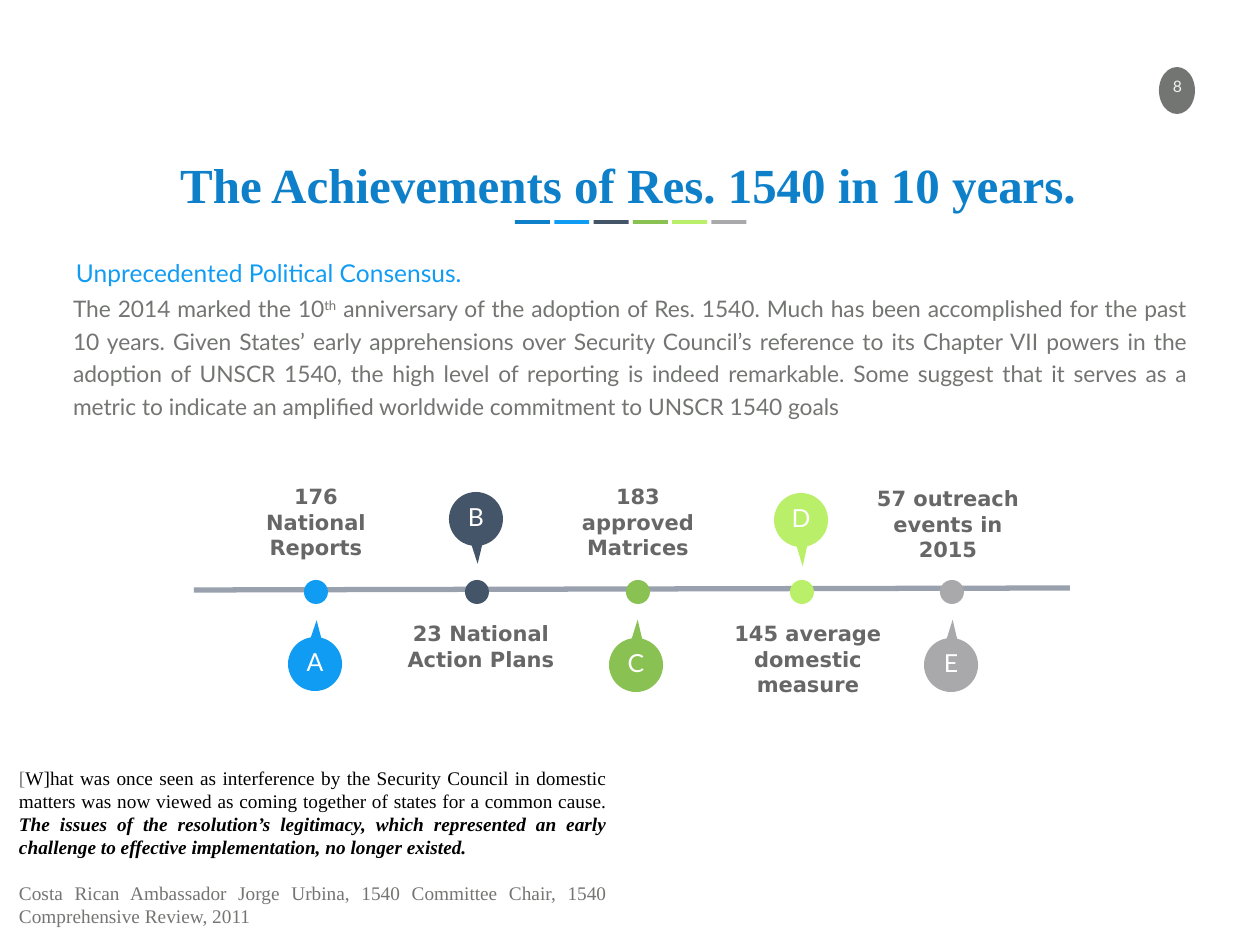
import pptx
import pptx.util
import pptx.dml.color
import pptx.enum.shapes
import pptx.enum.text
import pptx.oxml.ns
import lxml.etree

SCALE = 914400 / 126  # EMU per px
HUES = {
    "navy": "0E80C9", "blue": "119CF4", "slate": "445469", "green": "8AC153",
    "lime": "BAEF69", "grey": "A9A8AB", "text": "737572", "label": "676767",
    "rail": "9AA1AE", "pale": "F2F2F2", "white": "FFFFFF", "black": "000000",
}
KIND = pptx.enum.shapes.MSO_SHAPE
ALIGN = pptx.enum.text.PP_ALIGN
MID = pptx.enum.text.MSO_ANCHOR.MIDDLE
TOP = pptx.enum.text.MSO_ANCHOR.TOP
TIMES = "Times New Roman"

deck = pptx.Presentation()
deck.slide_width = round(1260 * SCALE)
deck.slide_height = round(945 * SCALE)
slide = deck.slides.add_slide(deck.slide_layouts[6])


def draw(kind, at, hue):
    shape = slide.shapes.add_shape(kind, *[round(n * SCALE) for n in at])
    shape.shadow.inherit = False
    shape.fill.solid()
    shape.fill.fore_color.rgb = pptx.dml.color.RGBColor.from_string(HUES[hue])
    shape.line.fill.background()
    return shape


def write(text, at=None, para=None, size=12, font="Lato", hue="text", bold=False,
          slant=False, align=ALIGN.CENTER, anchor=TOP, lead=None, raised=False):
    """Add a run to para, or to a new text box placed at `at`."""
    if para is None:
        box = slide.shapes.add_textbox(*[round(n * SCALE) for n in at])
        frame = box.text_frame
        frame.word_wrap = True
        frame.vertical_anchor = anchor
        frame.margin_left = frame.margin_right = 0
        frame.margin_top = frame.margin_bottom = 0
        para = frame.paragraphs[0]
        para.alignment = align
        if lead:
            para.line_spacing = lead
    run = para.add_run()
    run.text = text
    run.font.size = pptx.util.Pt(size)
    run.font.name = font
    run.font.bold = bold
    run.font.italic = slant
    run.font.color.rgb = pptx.dml.color.RGBColor.from_string(HUES[hue])
    if raised:
        run.font._element.set("baseline", "30000")
    return para


# Page number
draw(KIND.OVAL, (1159, 67, 36, 47), "text")
write("8", (1158, 77, 39, 20), size=9, hue="pale")

# Title with a row of colour bars
write("The Achievements of Res. 1540 in 10 years.", (163, 163, 930, 50),
      size=28, font=TIMES, hue="navy", bold=True, anchor=MID, lead=0.9)
for i, hue in enumerate(["navy", "blue", "slate", "green", "lime", "grey"]):
    draw(KIND.RECTANGLE, (515 + 39.3 * i, 220, 35, 4), hue)

# Lead and body text
write("Unprecedented Political Consensus.", (76, 258, 925, 14),
      size=14, hue="blue", align=ALIGN.JUSTIFY)
body = write("The 2014 marked the 10", (73, 289, 1113, 68),
             size=13, align=ALIGN.JUSTIFY, lead=1.2)
write("th", para=body, size=13, raised=True)
write(" anniversary of the adoption of Res. 1540. Much has been accomplished for "
      "the past 10 years. Given States’ early apprehensions over Security Council’s "
      "reference to its Chapter VII powers in the adoption of UNSCR 1540, the high "
      "level of reporting is indeed remarkable. Some suggest that it serves as a "
      "metric to indicate an amplified worldwide commitment to UNSCR 1540 goals",
      para=body, size=13)

# Timeline rail
ends = [round(n * SCALE) for n in (194, 590, 1070, 588)]
rail = slide.shapes.add_connector(pptx.enum.shapes.MSO_CONNECTOR.STRAIGHT, *ends)
rail.line.width = pptx.util.Pt(3)
rail.line.color.rgb = pptx.dml.color.RGBColor.from_string(HUES["rail"])
lxml.etree.SubElement(rail._element.spPr, pptx.oxml.ns.qn("a:effectLst"))

# Stops: letter, hue, dot left, pin left and top, tail, label left and top, label
stops = [
    ("A", "blue", 304, 288, 637, -0.81, 241, 484, "176 National Reports"),
    ("B", "slate", 465, 449, 492, 0.83, 406, 621, "23 National Action Plans"),
    ("C", "green", 626, 609, 638, -0.84, 563, 484, "183 approved Matrices"),
    ("D", "lime", 790, 774, 493, 0.86, 733, 621, "145 average domestic measure"),
    ("E", "grey", 940, 924, 638, -0.84, 873, 486, "57 outreach events in 2015"),
]
for letter, hue, dot, left, top, tail, x, y, label in stops:
    pin = draw(KIND.OVAL_CALLOUT, (left, top, 54, 54), hue)
    pin.adjustments[0] = 0.03
    pin.adjustments[1] = tail
    write(letter, (left + 15, top + 9, 24, 32), size=14.2, hue="white", anchor=MID)
    draw(KIND.OVAL, (dot, 580, 24, 24), hue)
    write(label, (x, y, 150, 73), font="DejaVu Sans", hue="label", bold=True)

# Quote and its source
quote = write("[", (19, 766, 588, 179), size=11, font=TIMES, align=ALIGN.JUSTIFY)
write("W]hat was once seen as interference by the Security Council in domestic "
      "matters was now viewed as coming together of states for a common cause. ",
      para=quote, size=11, font=TIMES, hue="black")
write("The issues of the resolution’s legitimacy, which represented an early "
      "challenge to effective implementation, no longer existed.",
      para=quote, size=11, font=TIMES, hue="black", bold=True, slant=True)
credit = slide.shapes[-1].text_frame.add_paragraph()
credit.alignment = ALIGN.JUSTIFY
credit.space_before = pptx.util.Pt(13)
write("Costa Rican Ambassador Jorge Urbina, 1540 Committee Chair, 1540 "
      "Comprehensive Review, 2011", para=credit, size=11, font=TIMES)

deck.save("out.pptx")
